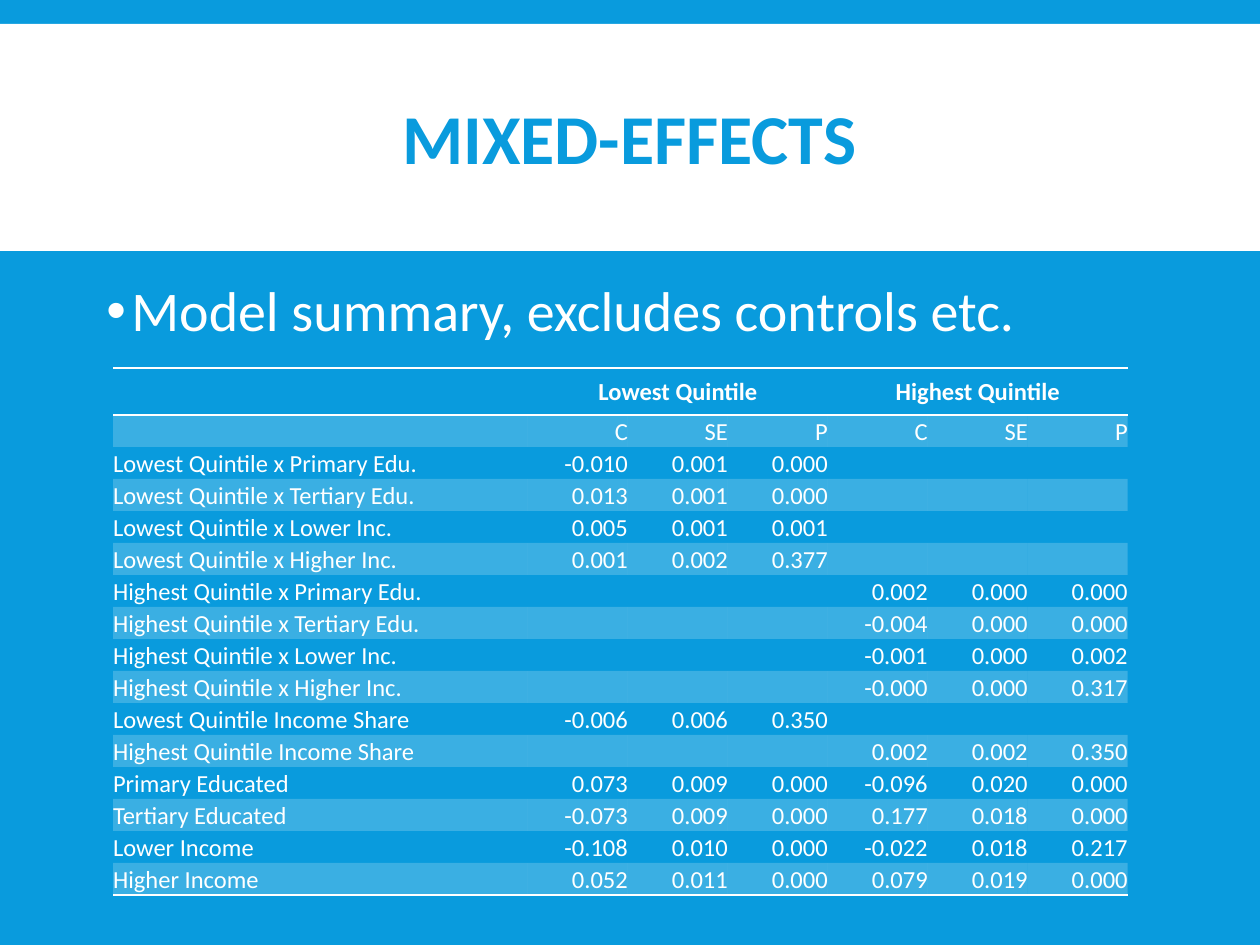
from lxml import etree
from pptx import Presentation
from pptx.dml.color import RGBColor
from pptx.enum import shapes, text
from pptx.oxml import ns
from pptx import util as u

PX = 914400 / 126
WHITE, BLUE = "FFFFFF", "099BDD"
ALIGN = text.PP_ALIGN

COLUMNS = [415] + [100] * 6
HEADER_HEIGHT, ROW_HEIGHT = 47, 32
GROUPS = {1: "Lowest Quintile", 4: "Highest Quintile"}
BLANK = [""] * 3
ROWS = [
    ["", "C", "SE", "P", "C", "SE", "P"],
    ["Lowest Quintile x Primary Edu.", "-0.010", "0.001", "0.000", *BLANK],
    ["Lowest Quintile x Tertiary Edu.", "0.013", "0.001", "0.000", *BLANK],
    ["Lowest Quintile x Lower Inc.", "0.005", "0.001", "0.001", *BLANK],
    ["Lowest Quintile x Higher Inc.", "0.001", "0.002", "0.377", *BLANK],
    ["Highest Quintile x Primary Edu.", *BLANK, "0.002", "0.000", "0.000"],
    ["Highest Quintile x Tertiary Edu.", *BLANK, "-0.004", "0.000", "0.000"],
    ["Highest Quintile x Lower Inc.", *BLANK, "-0.001", "0.000", "0.002"],
    ["Highest Quintile x Higher Inc.", *BLANK, "-0.000", "0.000", "0.317"],
    ["Lowest Quintile Income Share", "-0.006", "0.006", "0.350", *BLANK],
    ["Highest Quintile Income Share", *BLANK, "0.002", "0.002", "0.350"],
    ["Primary Educated", "0.073", "0.009", "0.000", "-0.096", "0.020", "0.000"],
    ["Tertiary Educated", "-0.073", "0.009", "0.000", "0.177", "0.018", "0.000"],
    ["Lower Income", "-0.108", "0.010", "0.000", "-0.022", "0.018", "0.217"],
    ["Higher Income", "0.052", "0.011", "0.000", "0.079", "0.019", "0.000"],
]


def px(length):
    return u.Emu(round(length * PX))


def color(value):
    return RGBColor.from_string(value)


def child(parent, tag, **attributes):
    return etree.SubElement(parent, ns.qn(tag), attributes)


class Builder:
    font = "Calibri"
    table_size = 14
    table_spacing = 1.07
    no_grid = "{2D5ABB26-0587-4C30-8999-92F81FD0307C}"

    def __init__(self, deck):
        self.page = deck.slides.add_slide(deck.slide_layouts[6])

    def background(self, fill):
        self.page.background.fill.solid()
        self.page.background.fill.fore_color.rgb = color(fill)

    def band(self, left, top, width, height, fill):
        box = self.page.shapes.add_shape(
            shapes.MSO_SHAPE.RECTANGLE, *map(px, (left, top, width, height)))
        box.shadow.inherit = False
        box.fill.solid()
        box.fill.fore_color.rgb = color(fill)
        box.line.fill.background()

    def add_span(self, para, words, size, ink=WHITE, bold=False, align=ALIGN.LEFT, spacing=0.9):
        para.alignment = align
        para.line_spacing = spacing
        span = para.add_run()
        span.text = words
        span.font.name = self.font
        span.font.size = u.Pt(size)
        span.font.bold = bold
        span.font.color.rgb = color(ink)

    def text_box(self, left, top, width, height, anchor):
        box = self.page.shapes.add_textbox(*map(px, (left, top, width, height)))
        box.text_frame.word_wrap = True
        box.text_frame.vertical_anchor = anchor
        return box.text_frame.paragraphs[0]

    def bullet(self, para, indent):
        para.space_before, para.space_after = u.Pt(12), u.Pt(2)
        settings = para._p.get_or_add_pPr()
        settings.set("marL", str(px(indent)))
        settings.set("indent", str(px(-indent)))
        child(child(settings, "a:buClr"), "a:srgbClr", val=WHITE)
        child(settings, "a:buFont", typeface="Arial")
        child(settings, "a:buChar", char="•")

    def table(self, left, top, columns, heights):
        frame = self.page.shapes.add_table(
            len(heights), len(columns), px(left), px(top), px(sum(columns)), px(sum(heights)))
        grid = frame.table
        grid.first_row = grid.horz_banding = False
        grid._tbl.tblPr.find(ns.qn("a:tableStyleId")).text = self.no_grid
        for column, width in zip(grid.columns, columns):
            column.width = px(width)
        for row, height in zip(grid.rows, heights):
            row.height = px(height)
        return grid

    def cell(self, cell, words, align, bold=False, insets=(0, 0), rules=(), shaded=False):
        cell.margin_left = cell.margin_right = px(insets[0])
        cell.margin_top = cell.margin_bottom = px(insets[1])
        cell.vertical_anchor = text.MSO_ANCHOR.MIDDLE
        para = cell.text_frame.paragraphs[0]
        if words:
            self.add_span(para, words, self.table_size, bold=bold, align=align,
                          spacing=self.table_spacing)
        else:
            # Keeps an empty cell from stretching its row
            child(para._p, "a:endParaRPr", sz=str(self.table_size * 100))
        settings = cell._tc.get_or_add_tcPr()
        for side in rules:
            line = child(settings, side, w=str(u.Pt(1)))
            child(child(line, "a:solidFill"), "a:srgbClr", val=WHITE)
        if shaded:
            # The fill follows the borders, so it is the last setting
            cell.fill.solid()
            cell.fill.fore_color.rgb = color(WHITE)
            child(settings[-1][0], "a:alpha", val="20000")
        else:
            cell.fill.background()


def main():
    deck = Presentation()
    deck.slide_width, deck.slide_height = px(1260), px(945)
    slide = Builder(deck)

    # Title band
    slide.background(BLUE)
    slide.band(0, 24, 1260, 227, WHITE)
    title = slide.text_box(94, 39, 1071, 208, text.MSO_ANCHOR.MIDDLE)
    slide.add_span(title, "MIXED-EFFECTS", 40, BLUE, True, ALIGN.CENTER, 0.85)

    # Table header: one merged cell over each group of three columns
    heights = [HEADER_HEIGHT] + [ROW_HEIGHT] * len(ROWS)
    grid = slide.table(113, 368, COLUMNS, heights)
    for start in GROUPS:
        grid.cell(0, start).merge(grid.cell(0, start + 2))
    for column in range(len(COLUMNS)):
        slide.cell(grid.cell(0, column), GROUPS.get(column, ""), ALIGN.CENTER, True,
                   (14, 7), ("a:lnT", "a:lnB"))

    # Table body: every other row is shaded, the last one is ruled off
    for number, row in enumerate(ROWS, 1):
        rules = ("a:lnB",) if number == len(ROWS) else ()
        for column, words in enumerate(row):
            slide.cell(grid.cell(number, column), words,
                       ALIGN.RIGHT if column else ALIGN.LEFT,
                       rules=rules, shaded=number % 2 == 1)

    # Summary line
    summary = slide.text_box(94, 277, 1071, 580, text.MSO_ANCHOR.TOP)
    slide.bullet(summary, 25)
    slide.add_span(summary, "Model summary, excludes controls etc.", 32)

    deck.save("out.pptx")


if __name__ == "__main__":
    main()
